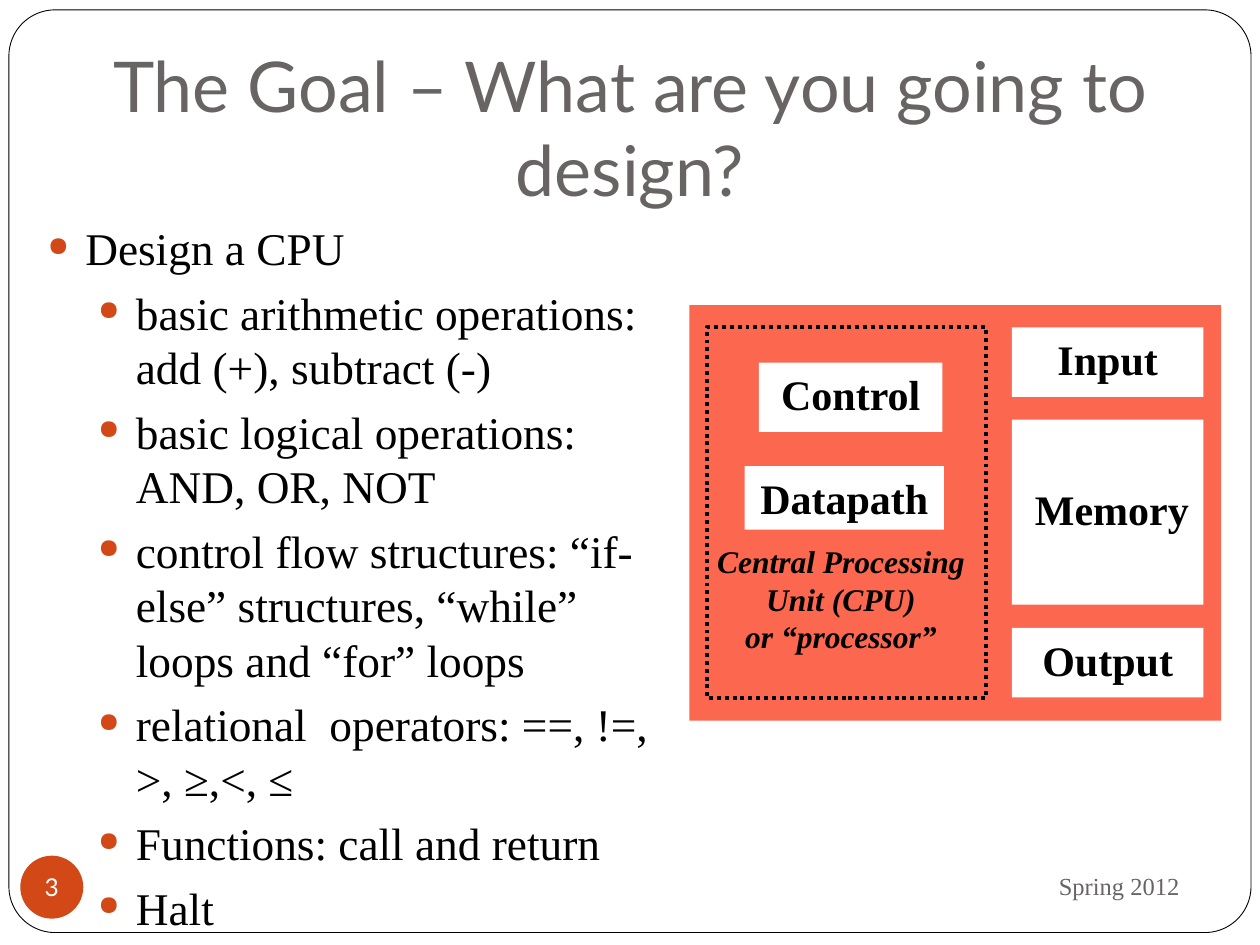
import pptx
import pptx.dml.color
import pptx.enum.dml
import pptx.enum.shapes
import pptx.enum.text
import pptx.util
from dataclasses import dataclass
from lxml import etree
from pptx.util import Cm, Pt

SHAPE = pptx.enum.shapes.MSO_SHAPE
ALIGN = pptx.enum.text.PP_ALIGN
ANCHOR = pptx.enum.text.MSO_ANCHOR
DRAWING = "http://schemas.openxmlformats.org/drawingml/2006/main"


@dataclass(frozen=True)
class Theme:
    white: str = "FFFFFF"
    black: str = "000000"
    gray: str = "696464"
    accent: str = "D34817"
    coral: str = "FB684F"
    heading_font: str = "Lato"
    body_font: str = "Times New Roman"
    title_size: float = 40
    body_size: float = 25.9
    block_size: float = 24
    caption_size: float = 18
    footer_size: float = 14


theme = Theme()


def add_block(shapes, kind, box, fill=None, line=None, width=0.5):
    """Add a preset shape; box is left, top, width, height in centimetres."""
    shape = shapes.add_shape(kind, *[Cm(length) for length in box])
    shape.shadow.inherit = False
    if fill:
        shape.fill.solid()
        shape.fill.fore_color.rgb = pptx.dml.color.RGBColor.from_string(fill)
    else:
        shape.fill.background()
    if line:
        shape.line.color.rgb = pptx.dml.color.RGBColor.from_string(line)
        shape.line.width = Pt(width)
    else:
        shape.line.fill.background()
    return shape


def write(shape, lines, size, color=theme.black, font=theme.body_font, align=ALIGN.CENTER,
          anchor=ANCHOR.TOP, wrap=True, bold=False, italic=False):
    """Fill a shape with one paragraph per line and return its text frame."""
    frame = shape.text_frame
    frame.text = "\n".join(lines)
    frame.word_wrap = wrap
    frame.vertical_anchor = anchor
    for paragraph in frame.paragraphs:
        paragraph.alignment = align
        paragraph.font.name = font
        paragraph.font.size = Pt(size)
        paragraph.font.bold = bold
        paragraph.font.italic = italic
        paragraph.font.color.rgb = pptx.dml.color.RGBColor.from_string(color)
    return frame


presentation = pptx.Presentation()
presentation.slide_width = Cm(25.4)
presentation.slide_height = Cm(19.05)
slide = presentation.slides.add_slide(presentation.slide_layouts[6])
shapes = slide.shapes

# Frame, title and footer
frame_border = add_block(shapes, SHAPE.ROUNDED_RECTANGLE, (0.18, 0.2, 25.04, 18.6),
                         theme.white, theme.black)
frame_border.adjustments[0] = 0.05

title = shapes.add_textbox(Cm(0.5), Cm(1.32), Cm(24.4), Cm(3.18))
title_frame = write(title, ["The Goal – What are you going to design?"], theme.title_size,
                    theme.gray, theme.heading_font, anchor=ANCHOR.BOTTOM)
title_frame.margin_bottom = Cm(0.25)

footer = shapes.add_textbox(Cm(17.15), Cm(17.2), Cm(6.88), Cm(1.32))
write(footer, ["Spring 2012"], theme.footer_size, theme.gray,
      align=ALIGN.RIGHT, anchor=ANCHOR.MIDDLE)

page_badge = add_block(shapes, SHAPE.OVAL, (0.41, 17.25, 1.27, 1.27), theme.accent)
badge_frame = write(page_badge, ["3"], theme.footer_size, theme.white, theme.heading_font,
                    anchor=ANCHOR.MIDDLE, wrap=False)
badge_frame.margin_left = badge_frame.margin_right = 0
badge_frame.margin_top = badge_frame.margin_bottom = 0

# Bulleted goals: the first is the heading, the rest are one level in
goals = [
    "Design a CPU",
    "basic arithmetic operations: add (+), subtract (-)",
    "basic logical operations: AND, OR, NOT",
    "control flow structures: “if-else” structures, “while” loops and “for” loops",
    "relational  operators: ==, !=, >, ≥,<, ≤",
    "Functions: call and return",
    "Halt",
]
goal_list = shapes.add_textbox(Cm(0.71), Cm(4.32), Cm(13), Cm(13.4))
goal_frame = write(goal_list, goals, theme.body_size, align=ALIGN.LEFT)
for index, paragraph in enumerate(goal_frame.paragraphs):
    paragraph.space_before = Pt(5.8)
    paragraph.line_spacing = 1.0
    paragraph.level = min(index, 1)
    properties = paragraph._p.get_or_add_pPr()
    properties.set("marL", str(Cm(1.78 if index else 0.76)))
    properties.set("indent", str(-Cm(0.76)))
    bullet = etree.fromstring(
        f'<a:bullet xmlns:a="{DRAWING}"><a:buClr><a:srgbClr val="{theme.accent}"/></a:buClr>'
        '<a:buSzPct val="60000"/><a:buChar char="●"/></a:bullet>')
    following = properties.find(f"{{{DRAWING}}}defRPr")
    for part in list(bullet):
        if following is None:
            properties.append(part)
        else:
            following.addprevious(part)

# Computer diagram
computer = shapes.add_group_shape().shapes
add_block(computer, SHAPE.RECTANGLE, (13.9, 6.15, 10.72, 8.38), theme.coral)
add_block(computer, SHAPE.RECTANGLE, (20.4, 8.46, 3.86, 3.73), theme.white)
processor = add_block(computer, SHAPE.RECTANGLE, (14.25, 6.6, 5.62, 7.47),
                      line=theme.black, width=2.25)
processor.line.dash_style = pptx.enum.dml.MSO_LINE.ROUND_DOT

blocks = [
    ("Control", (15.3, 7.31, 3.7, 1.4), theme.white),
    ("Datapath", (15.01, 9.4, 4.02, 1.28), theme.white),
    ("Memory", (20.57, 9.63, 3.69, 1.4), None),
    ("Input", (20.4, 6.6, 3.86, 1.4), theme.white),
    ("Output", (20.4, 12.66, 3.86, 1.4), theme.white),
]
for label, box, fill in blocks:
    block = add_block(computer, SHAPE.RECTANGLE, box, fill)
    write(block, [label], theme.block_size, bold=True)

caption = computer.add_textbox(Cm(14.07), Cm(10.8), Cm(5.77), Cm(3.07))
write(caption, ["Central Processing", "Unit (CPU)", "or “processor”"], theme.caption_size,
      wrap=False, bold=True, italic=True)

presentation.save("out.pptx")
